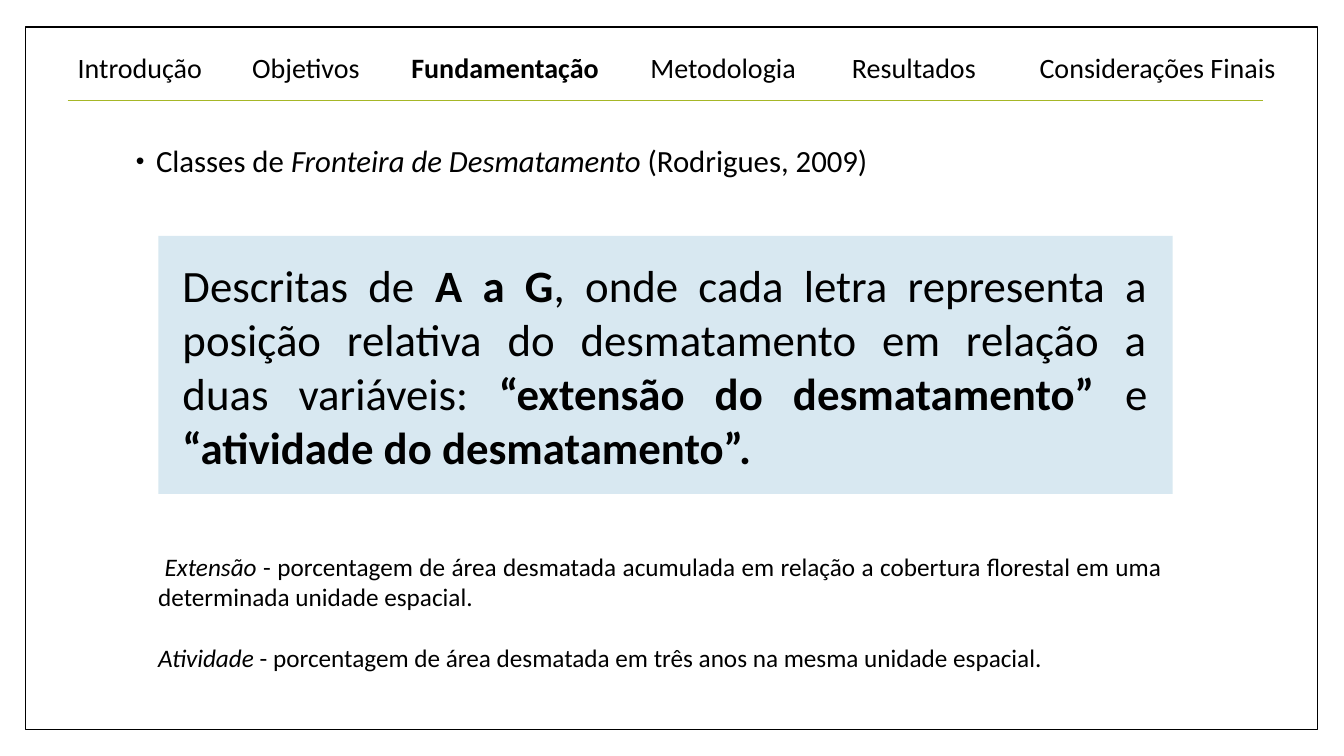
from lxml.etree import SubElement as Sub
from pptx import Presentation
from pptx.dml.color import RGBColor
from pptx.enum.shapes import MSO_CONNECTOR as Conn, MSO_SHAPE as Kind
from pptx.enum.text import MSO_ANCHOR as Anchor, MSO_AUTO_SIZE as Fit, PP_ALIGN as Align
from pptx.oxml.ns import qn
from pptx.util import Inches, Pt

BLACK, WHITE, BLUE, GREEN = "000000", "FFFFFF", "D8E8F1", "A6B727"
TABS = [("Introdução", 0), ("Objetivos", 1.73), ("Fundamentação", 3.31),
        ("Metodologia", 5.68), ("Resultados", 7.68), ("Considerações Finais", 9.54)]
ACTIVE = "Fundamentação"


def color(code):
    return RGBColor.from_string(code)


def assign(item, values):
    for name, value in values.items():
        setattr(item, name, value)


def place(shape, box):
    names = ("left", "top", "width", "height")
    assign(shape, dict(zip(names, map(Inches, box))))


def write(para, runs, size, **style):
    """Fill a paragraph with (text, font format) pairs."""
    assign(para, style)
    for text, look in runs:
        run = para.add_run()
        run.text = text
        assign(run.font, {"name": "Calibri", "size": Pt(size), **look})
        run.font.color.rgb = color(BLACK)


def panel(slide, box, fill):
    shape = slide.shapes.add_shape(Kind.RECTANGLE, *map(Inches, box))
    shape.shadow.inherit = False
    shape.fill.solid()
    shape.fill.fore_color.rgb = color(fill)
    shape.line.fill.background()
    return shape


def textbox(slide, box):
    frame = slide.shapes.add_textbox(*map(Inches, box)).text_frame
    frame.word_wrap = True
    return frame


def border(slide, box):
    shape = panel(slide, box, WHITE)
    shape.line.color.rgb = color(BLACK)
    shape.line.width = Pt(1)
    # Keep the border behind the title
    tree = slide.shapes.title.element.getparent()
    tree.insert(2, shape.element)


def header(slide, box):
    left, top, width, height = box
    title = slide.shapes.title
    place(title, box)
    assign(title.text_frame, {"vertical_anchor": Anchor.MIDDLE,
                              "auto_size": Fit.NONE, "word_wrap": True})
    # Section names at tab stops
    para = title.text_frame.paragraphs[0]
    runs = [(("\t" if stop else "") + name, {"bold": name == ACTIVE})
            for name, stop in TABS]
    write(para, runs, 20, alignment=Align.LEFT, line_spacing=0.9)
    stops = Sub(para._p.get_or_add_pPr(), qn("a:tabLst"))
    for name, stop in TABS[1:]:
        Sub(stops, qn("a:tab"), pos=str(Inches(stop)), algn="l")
    # Rule under the names
    ends = (left, top + height, left + 11.86, top + height)
    rule = slide.shapes.add_connector(Conn.STRAIGHT, *map(Inches, ends))
    rule.line.color.rgb = color(GREEN)
    rule.line.width = Pt(0.79)
    Sub(rule.element.spPr, qn("a:effectLst"))


def topic(slide, box):
    para = textbox(slide, box).paragraphs[0]
    write(para, [("Classes de ", {}),
                 ("Fronteira de Desmatamento ", {"italic": True}),
                 ("(Rodrigues, 2009)", {})], 22, line_spacing=0.9)
    # Bullet with a hanging indent
    props = para._p.get_or_add_pPr()
    props.set("marL", str(Inches(0.25)))
    props.set("indent", str(Inches(-0.2)))
    Sub(Sub(props, qn("a:buClr")), qn("a:srgbClr"), val=BLACK)
    Sub(props, qn("a:buSzPct"), val="80000")
    Sub(props, qn("a:buFont"), typeface="Arial")
    Sub(props, qn("a:buChar"), char="•")


def summary(slide, box):
    frame = panel(slide, box, BLUE).text_frame
    assign(frame, {"word_wrap": True, "vertical_anchor": Anchor.TOP,
                   "margin_left": Inches(0.24), "margin_right": Inches(0.25),
                   "margin_top": Inches(0.22), "margin_bottom": Inches(0.1)})
    bold = {"bold": True}
    write(frame.paragraphs[0], [
        ("Descritas de ", {}), ("A a G", bold),
        (", onde cada letra representa a posição relativa do desmatamento "
         "em relação a duas variáveis: ", {}),
        ("“extensão do desmatamento” ", bold), ("e ", {}),
        ("“atividade do desmatamento”.", bold)], 32, alignment=Align.JUSTIFY)


def terms(slide, box):
    frame = textbox(slide, box)
    first, second = frame.paragraphs[0], frame.add_paragraph()
    write(first, [
        (" Extensão ", {"italic": True}),
        ("- porcentagem de área desmatada acumulada em relação a cobertura "
         "florestal em uma determinada unidade espacial.", {})],
        18, alignment=Align.JUSTIFY)
    write(second, [
        ("Atividade", {"italic": True}),
        (" - porcentagem de área desmatada em três anos na mesma unidade "
         "espacial.", {})], 18, alignment=Align.JUSTIFY, space_before=Pt(22))


def main():
    deck = Presentation()
    assign(deck, {"slide_width": Inches(13.33), "slide_height": Inches(7.5)})
    slide = deck.slides.add_slide(deck.slide_layouts.get_by_name("Title Only"))
    border(slide, (0.25, 0.27, 12.82, 6.97))
    header(slide, (0.67, 0.37, 12.5, 0.63))
    topic(slide, (1.2, 1.4, 10.8, 0.5))
    summary(slide, (1.57, 2.34, 10.06, 2.56))
    terms(slide, (1.47, 5.42, 10.15, 1.62))
    deck.save("out.pptx")


if __name__ == "__main__":
    main()
